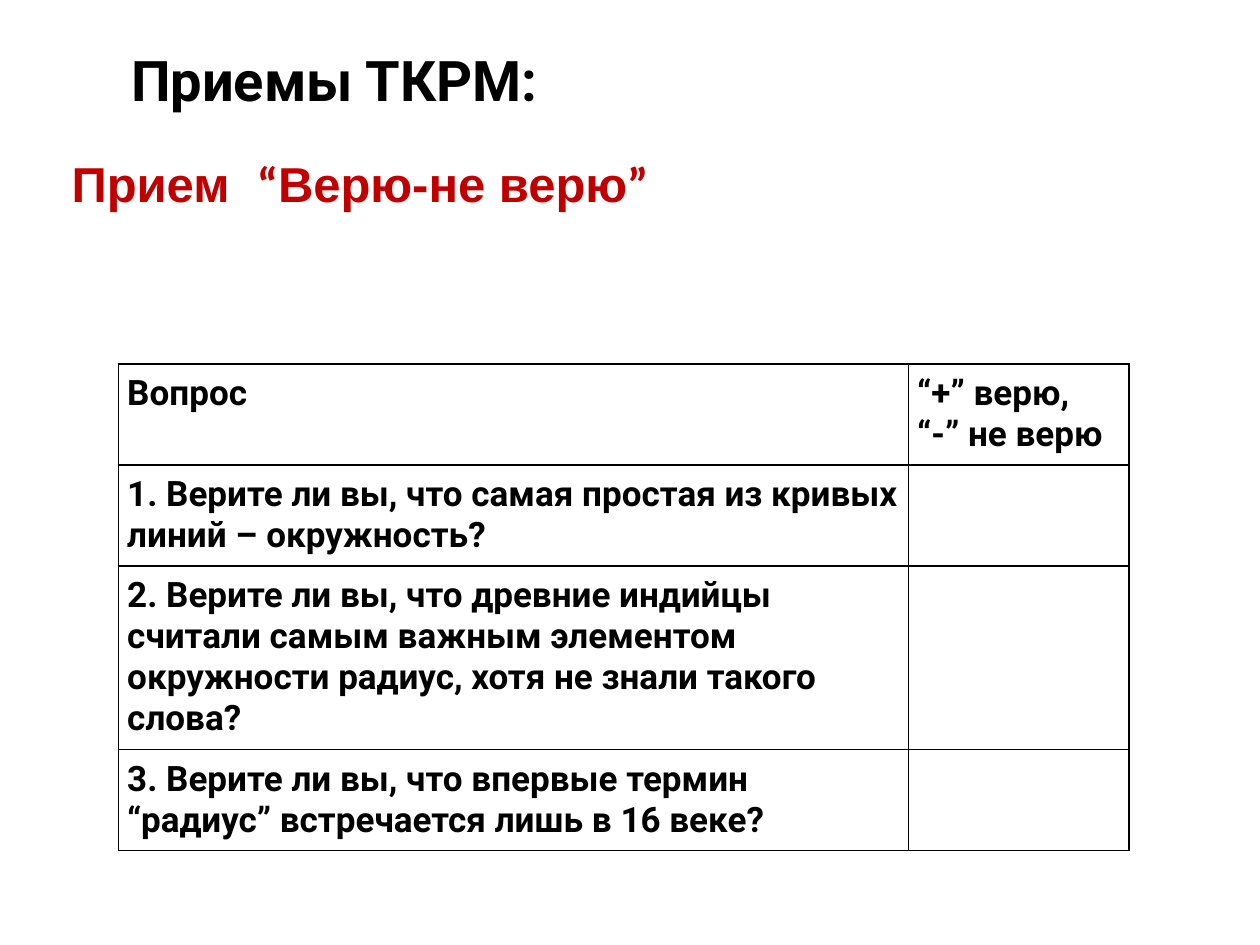
from dataclasses import dataclass

import pptx
import pptx.dml.color
import pptx.enum.text
import pptx.oxml
import pptx.oxml.ns
import pptx.util
from pptx.util import Inches

RGB = pptx.dml.color.RGBColor.from_string


@dataclass(frozen=True)
class Theme:
    ink: str = "000000"
    accent: str = "C00000"
    main_font: str = "Roboto"
    heading_font: str = "Arial"
    quote_font: str = "Calibri"
    title_size: int = 32
    heading_size: int = 28
    cell_size: int = 20
    border_width: int = 1


@dataclass(frozen=True)
class Row:
    question: str
    answer: str
    height: float


THEME = Theme()
COLUMN_WIDTHS = (6.27, 1.75)
CELL_MARGIN = 0.07
ROWS = (
    Row("Вопрос", "“+” верю,\n“-” не верю", 0.8),
    Row("1. Верите ли вы, что самая простая из кривых линий – окружность?", "", 0.8),
    Row("2. Верите ли вы, что древние индийцы считали самым важным элементом "
        "окружности радиус, хотя не знали такого слова?", "", 1.46),
    Row("3. Верите ли вы, что впервые термин “радиус” встречается лишь в 16 веке?", "", 0.8),
)


def style_font(font, name: str, size: int, color: str) -> None:
    font.name = name
    font.size = pptx.util.Pt(size)
    font.bold = True
    font.color.rgb = RGB(color)


def add_title(s) -> None:
    sp = s.shapes.title
    sp.left, sp.top, sp.width, sp.height = map(Inches, (0.94, 0.31, 3.69, 0.64))
    tf = sp.text_frame
    tf.text = "Приемы ТКРМ:"
    tf.word_wrap = False
    tf.auto_size = pptx.enum.text.MSO_AUTO_SIZE.NONE
    tf.vertical_anchor = pptx.enum.text.MSO_ANCHOR.TOP
    p = tf.paragraphs[0]
    p.alignment = pptx.enum.text.PP_ALIGN.LEFT
    style_font(p.runs[0].font, THEME.main_font, THEME.title_size, THEME.ink)


def add_heading(s) -> None:
    """Set the quotation marks in their own font and widen the gap before them."""
    sp = s.shapes.add_textbox(*map(Inches, (0.47, 1.17, 8.59, 0.91)))
    tf = sp.text_frame
    tf.word_wrap = True
    p = tf.paragraphs[0]
    for text in ("Прием", " ", "“", "Верю-не верю", "”"):
        r = p.add_run()
        r.text = text
        name = THEME.quote_font if text in "“”" else THEME.heading_font
        style_font(r.font, name, THEME.heading_size, THEME.accent)
        if text == " ":
            r.font._element.set("spc", "780")


def add_borders(cell) -> None:
    props = cell._tc.get_or_add_tcPr()
    width = pptx.util.Pt(THEME.border_width)
    for side in ("lnL", "lnR", "lnT", "lnB"):
        props.append(pptx.oxml.parse_xml(
            f'<a:{side} {pptx.oxml.ns.nsdecls("a")} w="{width}"><a:solidFill>'
            f'<a:srgbClr val="{THEME.ink}"/></a:solidFill></a:{side}>'))


def fill_cell(cell, text: str) -> None:
    margin = Inches(CELL_MARGIN)
    cell.margin_left = cell.margin_right = margin
    cell.margin_top = cell.margin_bottom = margin
    add_borders(cell)
    cell.fill.background()
    cell.text_frame.text = text
    for p in cell.text_frame.paragraphs:
        for r in p.runs:
            style_font(r.font, THEME.main_font, THEME.cell_size, THEME.ink)


def add_question_table(s) -> None:
    height = sum(row.height for row in ROWS)
    table = s.shapes.add_table(
        len(ROWS), len(COLUMN_WIDTHS), Inches(0.94), Inches(2.89),
        Inches(sum(COLUMN_WIDTHS)), Inches(height)).table
    table.first_row = table.horz_banding = False
    for column, width in zip(table.columns, COLUMN_WIDTHS):
        column.width = Inches(width)
    for i, row in enumerate(ROWS):
        table.rows[i].height = Inches(row.height)
        for j, text in enumerate((row.question, row.answer)):
            fill_cell(table.cell(i, j), text)


def main() -> None:
    prs = pptx.Presentation()
    prs.slide_width, prs.slide_height = Inches(10), Inches(7.5)
    s = prs.slides.add_slide(prs.slide_layouts.get_by_name("Title Only"))
    add_question_table(s)
    add_heading(s)
    add_title(s)
    prs.save("out.pptx")


if __name__ == "__main__":
    main()
